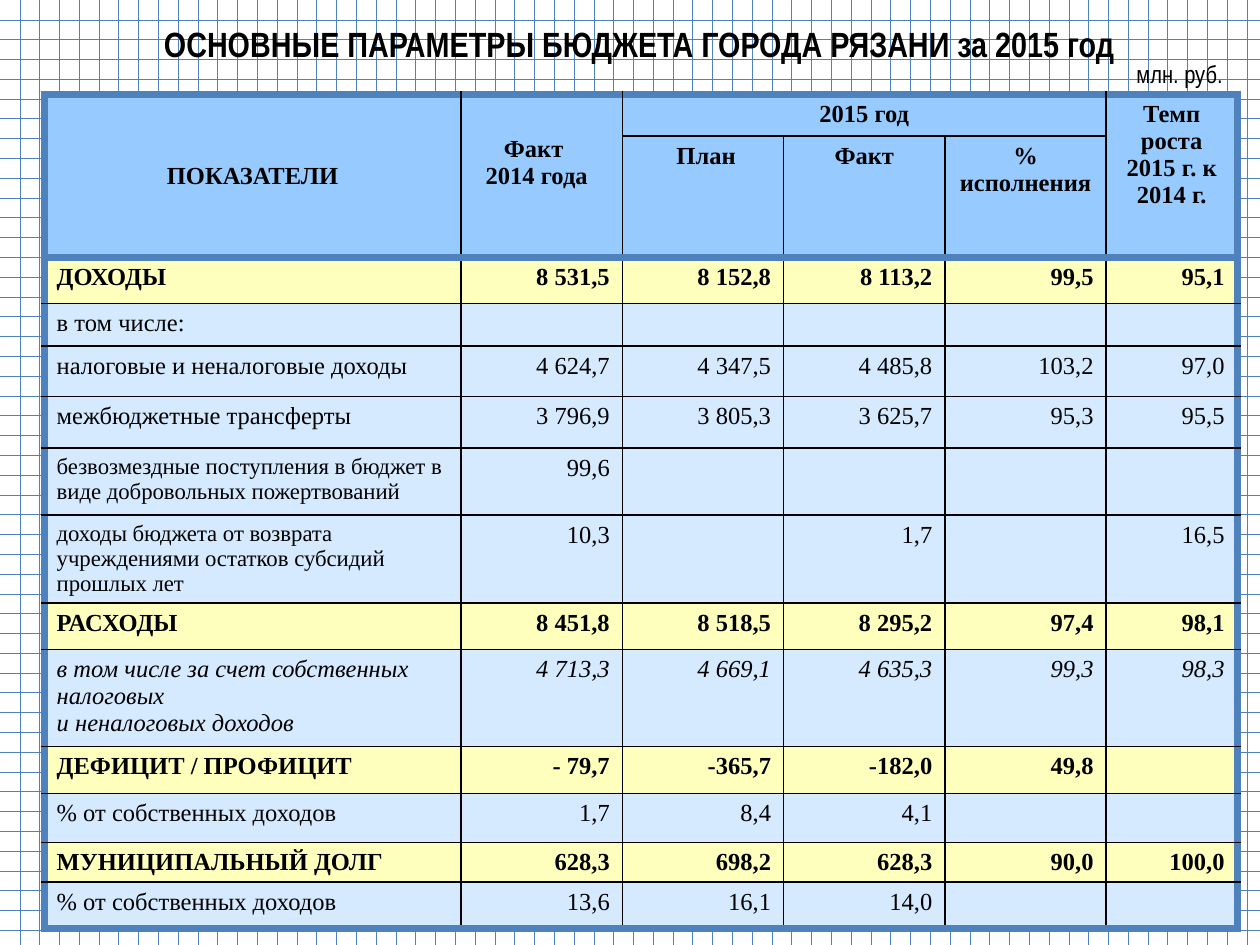
"""Build the slide with the main parameters of the city budget for 2015."""
import lxml.etree
import pptx
import pptx.dml.color
import pptx.enum.text
import pptx.oxml
import pptx.oxml.ns
import pptx.util

Inches = pptx.util.Inches
ALIGN = pptx.enum.text.PP_ALIGN
ANCHOR = pptx.enum.text.MSO_ANCHOR
SERIF, NARROW = "Times New Roman", "Arial Narrow"
BLACK, BLUE, WHITE = "000000", "4F81BD", "FFFFFF"
HEADER_FILL, TOTAL_FILL, DETAIL_FILL = "97CBFF", "FFFFBD", "D5EAFF"
INNER, OUTER = (BLACK, 1), (BLUE, 4.5)

COLUMN_WIDTHS = [3.31, 1.28, 1.28, 1.28, 1.28, 1.04]
ROW_HEIGHTS = [0.33, 0.96, 0.37, 0.32, 0.4, 0.41, 0.53,
               0.7, 0.37, 0.77, 0.37, 0.39, 0.31, 0.37]
HEADER_ROWS = 2

# Row, column, last row, last column and lines of each heading
HEADINGS = [
    (0, 0, 1, 0, ["ПОКАЗАТЕЛИ"]),
    (0, 1, 1, 1, ["Факт ", "2014 года"]),
    (0, 2, 0, 4, ["2015 год"]),
    (0, 5, 1, 5, ["Темп роста 2015 г. к 2014 г."]),
    (1, 2, 1, 2, [" План"]),
    (1, 3, 1, 3, ["Факт"]),
    (1, 4, 1, 4, ["% исполнения"]),
]

TOTAL = {"bold": True}
DETAIL = {}
SMALL = {"label_size": 13}
ITALIC = {"italic": True}
INDICATORS = [
    (TOTAL, ["ДОХОДЫ"], ["8 531,5", "8 152,8", "8 113,2", "99,5", "95,1"]),
    (DETAIL, ["в том числе:"], [""] * 5),
    (DETAIL, ["налоговые и неналоговые доходы"],
     ["4 624,7", "4 347,5", "4 485,8", "103,2", "97,0"]),
    (DETAIL, ["межбюджетные трансферты"],
     ["3 796,9", "3 805,3", "3 625,7", "95,3", "95,5"]),
    (SMALL, ["безвозмездные поступления в бюджет в виде добровольных пожертвований"],
     ["99,6", "", "", "", ""]),
    (SMALL, ["доходы бюджета от возврата учреждениями остатков субсидий прошлых лет"],
     ["10,3", "", "1,7", "", "16,5"]),
    (TOTAL, ["РАСХОДЫ"], ["8 451,8", "8 518,5", "8 295,2", "97,4", "98,1"]),
    (ITALIC, ["в том числе за счет собственных налоговых", "и неналоговых доходов"],
     ["4 713,3", "4 669,1", "4 635,3", "99,3", "98,3"]),
    (TOTAL, ["ДЕФИЦИТ / ПРОФИЦИТ"], ["- 79,7", "-365,7", "-182,0", "49,8", ""]),
    (DETAIL, ["% от собственных доходов"], ["1,7", "8,4", "4,1", "", ""]),
    (TOTAL, ["МУНИЦИПАЛЬНЫЙ ДОЛГ"], ["628,3", "698,2", "628,3", "90,0", "100,0"]),
    (DETAIL, ["% от собственных доходов"], ["13,6", "16,1", "14,0", "", ""]),
]


def rgb(value):
    """Turn a hex string into a colour."""
    return pptx.dml.color.RGBColor.from_string(value)


def write(frame, lines, align, size=14, bold=False, italic=False, font=SERIF):
    """Write each line as a paragraph with one formatted run."""
    for index, line in enumerate(lines):
        paragraph = frame.add_paragraph() if index else frame.paragraphs[0]
        paragraph.alignment = align
        if not line:
            continue
        run = paragraph.add_run()
        run.text = line
        run.font.name = font
        run.font.size = pptx.util.Pt(size)
        run.font.bold = bold
        run.font.italic = italic
        run.font.color.rgb = rgb(BLACK)


def set_grid_background(slide):
    """Fill the slide background with a blue grid pattern."""
    background = pptx.oxml.parse_xml(
        f'<p:bg {pptx.oxml.ns.nsdecls("p", "a")}><p:bgPr>'
        f'<a:pattFill prst="dotGrid"><a:fgClr><a:srgbClr val="{BLUE}"/></a:fgClr>'
        f'<a:bgClr><a:srgbClr val="{WHITE}"/></a:bgClr></a:pattFill>'
        '<a:effectLst/></p:bgPr></p:bg>')
    slide.element.cSld.insert(0, background)


def add_title(slide):
    """Place and write the slide title."""
    title = slide.shapes.title
    title.left, title.top = Inches(0.51), Inches(0.11)
    title.width, title.height = Inches(9.13), Inches(0.47)
    title.text_frame.vertical_anchor = ANCHOR.MIDDLE
    write(title.text_frame, ["ОСНОВНЫЕ ПАРАМЕТРЫ БЮДЖЕТА ГОРОДА РЯЗАНИ за 2015 год"],
          ALIGN.CENTER, 20, bold=True, font=NARROW)


def add_unit(slide):
    """Add the unit of measurement above the table."""
    unit = slide.shapes.add_textbox(Inches(8.78), Inches(0.42), Inches(1.1), Inches(0.34))
    unit.text_frame.word_wrap = True
    unit.text_frame.margin_left = Inches(0.24)
    unit.text_frame.margin_right = 0
    write(unit.text_frame, ["млн. руб."], ALIGN.LEFT, font=NARROW)


def set_borders(cell, row, column):
    """Draw thick blue lines round the table and header, thin black ones inside."""
    last_row = row + cell.span_height - 1
    last_column = column + cell.span_width - 1
    sides = {
        "L": column == 0,
        "R": last_column == len(COLUMN_WIDTHS) - 1,
        "T": row in (0, HEADER_ROWS),
        "B": last_row in (HEADER_ROWS - 1, len(ROW_HEIGHTS) - 1),
    }
    properties = cell._tc.get_or_add_tcPr()
    for index, (side, is_outer) in enumerate(sides.items()):
        color, width = OUTER if is_outer else INNER
        properties.insert(index, pptx.oxml.parse_xml(
            f'<a:ln{side} {pptx.oxml.ns.nsdecls("a")} w="{int(width * 12700)}">'
            f'<a:solidFill><a:srgbClr val="{color}"/></a:solidFill></a:ln{side}>'))


def format_cell(cell, row, column, fill):
    """Set the fill, the borders and the size of empty text in a cell."""
    cell.fill.solid()
    cell.fill.fore_color.rgb = rgb(fill)
    if not cell.is_spanned:
        set_borders(cell, row, column)
    paragraph = cell.text_frame.paragraphs[0]
    if not paragraph.runs:
        lxml.etree.SubElement(
            paragraph._p, pptx.oxml.ns.qn("a:endParaRPr"), sz="1400")


def write_headings(table):
    """Merge and write the table headings."""
    for row, column, last_row, last_column, lines in HEADINGS:
        cell = table.cell(row, column)
        if (row, column) != (last_row, last_column):
            cell.merge(table.cell(last_row, last_column))
        write(cell.text_frame, lines, ALIGN.CENTER, bold=True)
        if column < 2:
            cell.vertical_anchor = ANCHOR.MIDDLE
    previous_year = table.cell(0, 1)
    previous_year.margin_bottom = Inches(0.26)
    previous_year.margin_right = Inches(0.18)


def write_indicators(table):
    """Write the label and the values of each indicator."""
    for row, (style, label, values) in enumerate(INDICATORS, HEADER_ROWS):
        emphasis = {"bold": style.get("bold", False), "italic": style.get("italic", False)}
        write(table.cell(row, 0).text_frame, label, ALIGN.LEFT,
              style.get("label_size", 14), **emphasis)
        for column, value in enumerate(values, 1):
            write(table.cell(row, column).text_frame, [value], ALIGN.RIGHT, **emphasis)


def add_budget_table(slide):
    """Add the table of budget indicators."""
    table = slide.shapes.add_table(
        len(ROW_HEIGHTS), len(COLUMN_WIDTHS), Inches(0.35), Inches(0.75),
        Inches(sum(COLUMN_WIDTHS)), Inches(sum(ROW_HEIGHTS))).table
    table.first_row = table.horz_banding = False
    for column, width in zip(table.columns, COLUMN_WIDTHS):
        column.width = Inches(width)
    for row, height in zip(table.rows, ROW_HEIGHTS):
        row.height = Inches(height)
    write_headings(table)
    write_indicators(table)
    fills = [HEADER_FILL] * HEADER_ROWS + [
        TOTAL_FILL if style is TOTAL else DETAIL_FILL for style, _, _ in INDICATORS]
    for row, fill in enumerate(fills):
        for column in range(len(COLUMN_WIDTHS)):
            format_cell(table.cell(row, column), row, column, fill)


def main():
    """Build and save the presentation."""
    presentation = pptx.Presentation()
    presentation.slide_width, presentation.slide_height = Inches(10), Inches(7.5)
    slide = presentation.slides.add_slide(presentation.slide_layouts[5])
    set_grid_background(slide)
    add_title(slide)
    add_budget_table(slide)
    add_unit(slide)
    presentation.save("out.pptx")


if __name__ == "__main__":
    main()
